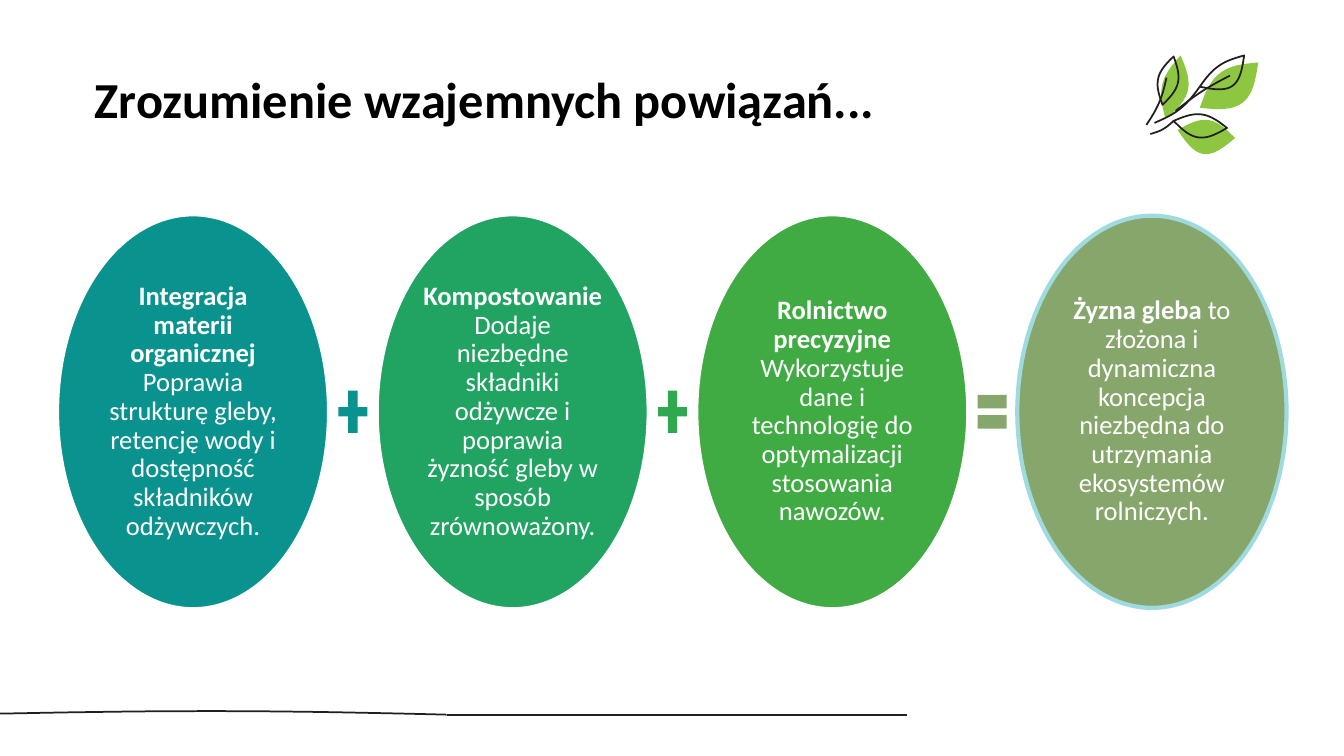
from math import hypot, pi, sin

from pptx import Presentation
from pptx import util as u
from pptx.dml.color import RGBColor
from pptx.enum import shapes, text
from pptx.oxml import ns
from lxml import etree

WHITE, INK, LEAF = "FFFFFF", "231F20", "8DC641"


def paint(shape, fill=None, line=None, width=1):
    shape.shadow.inherit = False
    for part, colour in ((shape.fill, fill), (shape.line.fill, line)):
        if colour:
            part.solid()
            part.fore_color.rgb = RGBColor.from_string(colour)
        else:
            part.background()
    if line:
        shape.line.width = u.Pt(width)


def write(shape, paragraphs, size, colour, align, spacing=1.0, inset=0.02):
    """Each paragraph is a list of (words, bold) runs."""
    frame = shape.text_frame
    frame.word_wrap = True
    frame.auto_size = text.MSO_AUTO_SIZE.NONE
    frame.vertical_anchor = text.MSO_ANCHOR.MIDDLE
    frame.margin_left = frame.margin_right = u.Inches(inset)
    frame.margin_top = frame.margin_bottom = u.Inches(min(inset, 0.05))
    for i, runs in enumerate(paragraphs):
        paragraph = frame.add_paragraph() if i else frame.paragraphs[0]
        paragraph.alignment, paragraph.line_spacing = align, spacing
        paragraph.space_before = paragraph.space_after = u.Pt(0)
        for words, bold in runs:
            run = paragraph.add_run()
            run.text = words
            run.font.name, run.font.size, run.font.bold = "Calibri", u.Pt(size), bold
            run.font.color.rgb = RGBColor.from_string(colour)


deck = Presentation()
deck.slide_width, deck.slide_height = u.Inches(13.33), u.Inches(7.5)
slide = deck.slides.add_slide(deck.slide_layouts[5])

# Title
title = slide.shapes.title
title.left, title.top, title.width, title.height = map(u.Inches, (0.84, 0.62, 8.35, 0.71))
write(title, [[("Zrozumienie wzajemnych powiązań...", True)]], 36, "000000",
      text.PP_ALIGN.LEFT, inset=0.1)

# Soil equation: ovals on an even step, an operator before each later one
LEFT, TOP, STEP, OVAL_W, OVAL_H = 0.58, 2.14, 3.17, 2.67, 3.89
SIGN_W, SIGN_H = 0.39, 0.57
PLUS, EQUAL = shapes.MSO_SHAPE.MATH_PLUS, shapes.MSO_SHAPE.MATH_EQUAL
terms = [
    ("0A938E", WHITE, 1, None, None,
     [[("Integracja materii organicznej", True)],
      [("Poprawia strukturę gleby, retencję wody i dostępność składników odżywczych.", False)]]),
    ("21A362", WHITE, 1, PLUS, "0A938E",
     [[("Kompostowanie", True)],
      [("Dodaje niezbędne składniki odżywcze i poprawia żyzność gleby w sposób zrównoważony.", False)]]),
    ("40AB43", WHITE, 1, PLUS, "2FA850",
     [[("Rolnictwo precyzyjne", True)],
      [("Wykorzystuje dane i technologię do optymalizacji stosowania nawozów.", False)]]),
    ("86A66B", "9FDADF", 3, EQUAL, "86A66B",
     [[("Żyzna gleba ", True),
       ("to złożona i dynamiczna koncepcja niezbędna do utrzymania ekosystemów rolniczych.", False)]]),
]
for i, (fill, edge, width, sign, sign_fill, paragraphs) in enumerate(terms):
    left = LEFT + i * STEP
    if sign:
        sign_left = left - (STEP - OVAL_W + SIGN_W) / 2
        sign_top = TOP + (OVAL_H - SIGN_H) / 2
        operator = slide.shapes.add_shape(
            sign, *map(u.Inches, (sign_left, sign_top, SIGN_W, SIGN_H)))
        paint(operator, sign_fill)
    oval = slide.shapes.add_shape(
        shapes.MSO_SHAPE.OVAL, *map(u.Inches, (left, TOP, OVAL_W, OVAL_H)))
    paint(oval, fill, edge, width)
    write(oval, paragraphs, 19, WHITE, text.PP_ALIGN.CENTER, 0.9)

# Leaf ornament and footer curve: base, tip and the bulge of one or two sides
arcs = [
    (LEAF, (11.56, 1.18), (11.71, 0.55), [0.15, -0.11]),
    (LEAF, (11.9, 1.07), (12.48, 0.62), [0.22, -0.15]),
    (LEAF, (11.68, 1.29), (12.25, 1.37), [0.2, -0.14]),
    (None, (11.53, 1.04), (11.64, 0.56), [0.1, -0.1]),
    (None, (11.9, 0.86), (12.34, 0.55), [0.18, -0.06]),
    (None, (11.64, 1.2), (12.17, 1.27), [0.13, -0.1]),
    (None, (11.37, 1.24), (11.57, 0.77), [0.03]),
    (None, (11.45, 1.22), (11.9, 0.86), [0.05]),
    (None, (11.66, 1.1), (12.2, 0.75), [-0.02]),
    (None, (11.41, 1.33), (11.64, 1.2), [0.02]),
    (None, (0, 7.08), (4.43, 7.09), [-0.03]),
]
SAMPLES = 20
for fill, (x, y), (tip_x, tip_y), bulges in arcs:
    dx, dy = tip_x - x, tip_y - y
    length = hypot(dx, dy)
    outline = []
    for side, bulge in enumerate(bulges):
        for n in range(SAMPLES + 1):
            t = 1 - n / SAMPLES if side else n / SAMPLES
            offset = bulge * sin(pi * t) / length
            outline.append((u.Inches(x + t * dx - offset * dy),
                            u.Inches(y + t * dy + offset * dx)))
    builder = slide.shapes.build_freeform(*outline[0])
    builder.add_line_segments(outline[1:], close=len(bulges) == 2)
    paint(builder.convert_to_shape(), fill, None if fill else INK, 1.25)

# Straight part of the footer line
footer = slide.shapes.add_connector(
    shapes.MSO_CONNECTOR.STRAIGHT, *map(u.Inches, (4.43, 7.09, 9, 7.09)))
footer.line.width = u.Pt(1.25)
footer.line.color.rgb = RGBColor.from_string(INK)
etree.SubElement(footer.element.spPr, ns.qn("a:effectLst"))

deck.save("out.pptx")
